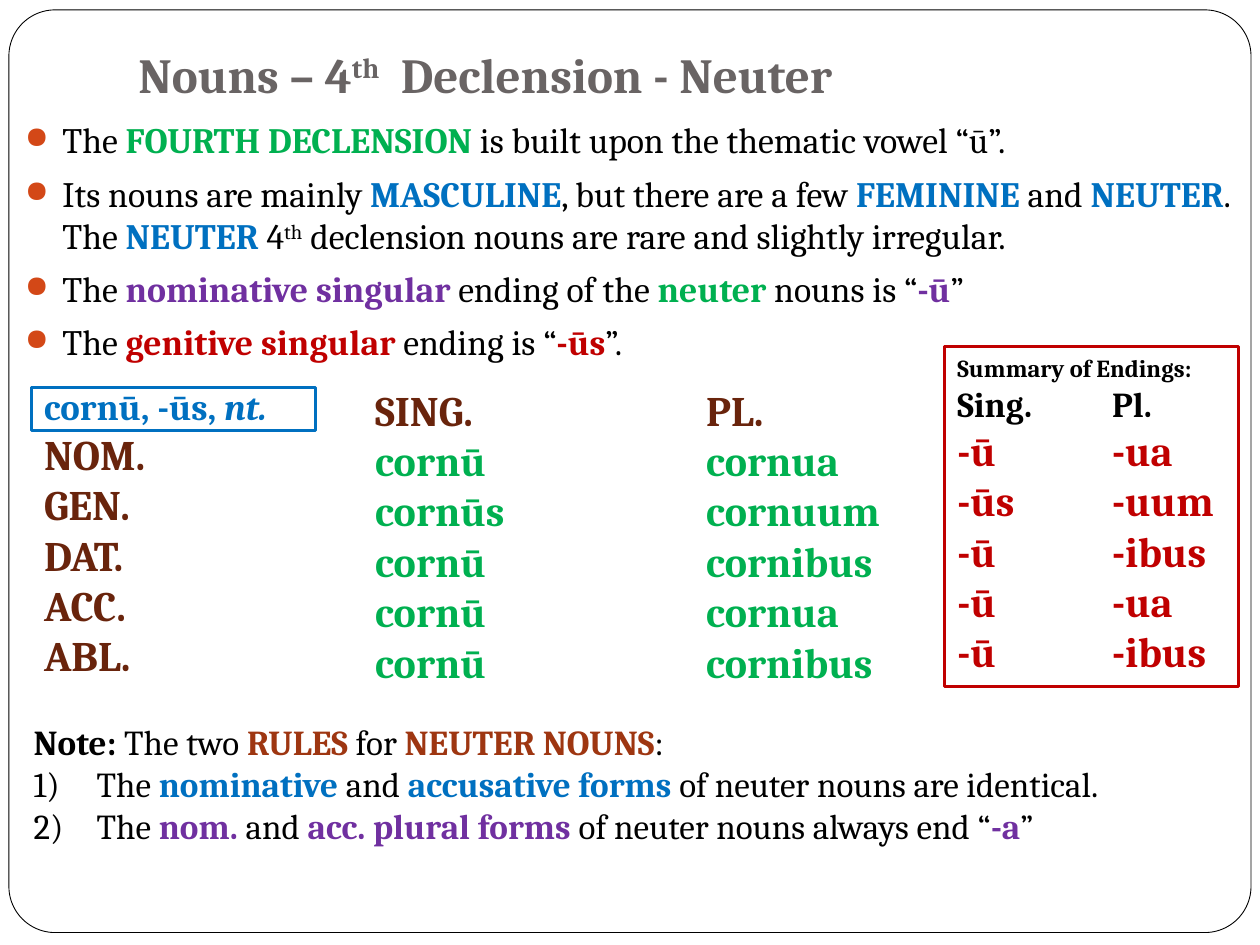
import pptx
import pptx.util
import pptx.dml.color
import pptx.enum.shapes
import pptx.enum.text
import pptx.oxml.ns
from lxml import etree

Cm, Pt = pptx.util.Cm, pptx.util.Pt
RGBColor = pptx.dml.color.RGBColor
SHAPES = pptx.enum.shapes.MSO_SHAPE
ANCHOR, FIT = pptx.enum.text.MSO_ANCHOR, pptx.enum.text.MSO_AUTO_SIZE
qn = pptx.oxml.ns.qn

FONT = "Cambria"
BLACK = RGBColor(0, 0, 0)
WHITE = RGBColor(0xFF, 0xFF, 0xFF)
GREY = RGBColor(0x69, 0x64, 0x64)
BLUE = RGBColor(0x00, 0x70, 0xC0)
GREEN = RGBColor(0x00, 0xB0, 0x50)
PURPLE = RGBColor(0x70, 0x30, 0xA0)
RED = RGBColor(0xC0, 0x00, 0x00)
BROWN = RGBColor(0x69, 0x24, 0x0C)
RUST = RGBColor(0x9E, 0x36, 0x11)
ORANGE = RGBColor(0xD3, 0x48, 0x17)

# A plain string is normal text, (text, colour) is bold, SUPER is a raised "th".
SUPER = ("th", None)
TITLE = ["Nouns – 4", SUPER, "  Declension - Neuter"]
POINTS = [
    ["The ", ("FOURTH DECLENSION ", GREEN), "is built upon the thematic vowel “ū”."],
    ["Its nouns are mainly ", ("MASCULINE", BLUE), ", but there are a few ",
     ("FEMININE ", BLUE), "and ", ("NEUTER", BLUE), ". The ", ("NEUTER ", BLUE),
     "4", SUPER, " declension nouns are rare and slightly irregular."],
    ["The ", ("nominative singular ", PURPLE), "ending of the ", ("neuter ", GREEN),
     "nouns is “", ("-ū", PURPLE), "”"],
    ["The ", ("genitive singular ", RED), "ending is “", ("-ūs", RED), "”."],
]
CASES = ["NOM.", "GEN.", "DAT.", "ACC.", "ABL."]
FORMS = {
    "SING.": ["cornū", "cornūs", "cornū", "cornū", "cornū"],
    "PL.": ["cornua", "cornuum", "cornibus", "cornua", "cornibus"],
}
ENDINGS = [("-ū", "-ua"), ("-ūs", "-uum"), ("-ū", "-ibus"), ("-ū", "-ua"), ("-ū", "-ibus")]
NOTE = [("Note: ", BLACK), "The two ", ("RULES ", RUST), "for ", ("NEUTER NOUNS", RUST), ":"]
RULES = [
    ["The ", ("nominative ", BLUE), "and ", ("accusative forms ", BLUE),
     "of neuter nouns are identical."],
    ["The ", ("nom. ", PURPLE), "and ", ("acc. plural forms ", PURPLE),
     "of neuter nouns always end “", ("-a", PURPLE), "”"],
]


def add_text(shapes, left, top, width, height, fit=FIT.SHAPE_TO_FIT_TEXT):
    frame = shapes.add_textbox(Cm(left), Cm(top), Cm(width), Cm(height)).text_frame
    frame.word_wrap = True
    frame.auto_size = fit
    return frame


def fill_paragraphs(frame, lines, size, colour=BLACK, bold=False):
    """Write each line of spans as one paragraph and return the paragraphs."""
    for index, line in enumerate(lines):
        para = frame.add_paragraph() if index else frame.paragraphs[0]
        for part in line:
            text, accent = (part, None) if isinstance(part, str) else part
            span = para.add_run()
            span.text = text
            span.font.name = FONT
            span.font.size = Pt(size)
            span.font.bold = bold or accent is not None
            span.font.color.rgb = accent or colour
            if part is SUPER:
                span.font._element.set("baseline", "30000")
    return frame.paragraphs


def add_property(para, tag, **attributes):
    return etree.SubElement(para._p.get_or_add_pPr(), qn(tag), **attributes)


def hang(para, indent):
    properties = para._p.get_or_add_pPr()
    properties.set("marL", str(Cm(indent)))
    properties.set("indent", str(-Cm(indent)))


def add_outline(shapes, kind, left, top, width, height, colour, weight):
    shape = shapes.add_shape(kind, Cm(left), Cm(top), Cm(width), Cm(height))
    shape.shadow.inherit = False
    shape.fill.background()
    shape.line.color.rgb = colour
    shape.line.width = Pt(weight)
    return shape


deck = pptx.Presentation()
deck.slide_width, deck.slide_height = Cm(25.4), Cm(19.05)
page = deck.slides.add_slide(deck.slide_layouts[6])

border = add_outline(page.shapes, SHAPES.ROUNDED_RECTANGLE, 0.18, 0.2, 25.04, 18.6, BLACK, 0.5)
border.adjustments[0] = 0.05
border.fill.solid()
border.fill.fore_color.rgb = WHITE

title = add_text(page.shapes, 2.54, 0.76, 21.59, 1.57, FIT.NONE)
title.vertical_anchor = ANCHOR.BOTTOM
title.margin_bottom = Cm(0.25)
fill_paragraphs(title, [TITLE], 28, GREY, bold=True)

points = add_text(page.shapes, 0.25, 2.26, 25.15, 5.13, FIT.NONE)
for para in fill_paragraphs(points, POINTS, 20.4):
    hang(para, 0.76)
    para.space_before = Pt(5.8)
    bullet_colour = add_property(para, "a:buClr")
    etree.SubElement(bullet_colour, qn("a:srgbClr"), val=str(ORANGE))
    add_property(para, "a:buSzPct", val="85000")
    add_property(para, "a:buChar", char="●")

# The declension flows through three text columns of six lines each.
declension = add_text(page.shapes, 0.64, 7.62, 20.52, 6.4)
declension._txBody.bodyPr.set("numCol", "3")
lines = [[("cornū, -ūs, ", BLUE), ("nt.", BLUE)]] + [[(case, BROWN)] for case in CASES]
for heading, forms in FORMS.items():
    lines += [[(heading, BROWN)]] + [[(form, GREEN)] for form in forms]
entry = fill_paragraphs(declension, lines, 24)[0]
for span in entry.runs:
    span.font.size = Pt(21)
entry.runs[-1].font.italic = True
add_outline(page.shapes, SHAPES.RECTANGLE, 0.64, 7.82, 5.72, 0.86, BLUE, 1.75)

note = add_text(page.shapes, 0.43, 14.4, 24.56, 2.82)
for para in fill_paragraphs(note, [NOTE] + RULES, 20)[1:]:
    hang(para, 1.27)
    add_property(para, "a:buAutoNum", type="arabicParenR")

summary = page.shapes.add_group_shape().shapes
endings = add_text(summary, 19.05, 6.99, 6.35, 6.83)
rows = [["Summary of Endings:"], ["Sing.\tPl."]]
rows += [[("\t".join(pair), RED)] for pair in ENDINGS]
paragraphs = fill_paragraphs(endings, rows, 24, bold=True)
for para, size in zip(paragraphs, (14, 20)):
    para.runs[0].font.size = Pt(size)
for para in paragraphs[1:]:
    tabs = add_property(para, "a:tabLst")
    etree.SubElement(tabs, qn("a:tab"), pos=str(Cm(3.12)), algn="l")
add_outline(summary, SHAPES.RECTANGLE, 19.05, 6.99, 5.92, 6.86, RED, 1.75)

deck.save("out.pptx")
